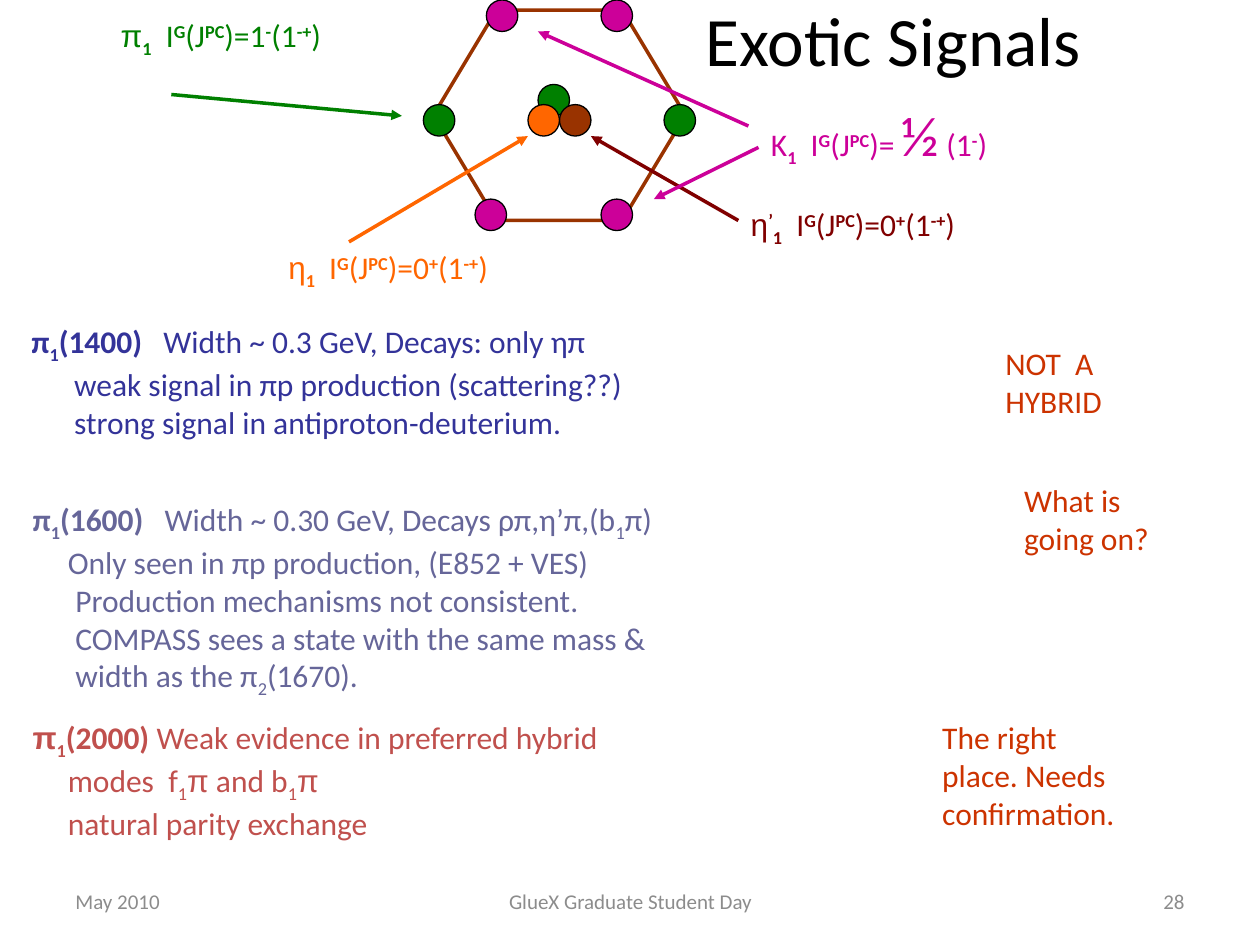
from dataclasses import dataclass
from typing import List, NamedTuple, Optional, Tuple

import lxml.etree
import pptx
import pptx.dml.color
import pptx.enum.shapes
import pptx.enum.text
import pptx.oxml.ns
import pptx.util

Inches = pptx.util.Inches
Pt = pptx.util.Pt
Align = pptx.enum.text.PP_ALIGN
Anchor = pptx.enum.text.MSO_ANCHOR
Shape = pptx.enum.shapes.MSO_SHAPE
qn = pptx.oxml.ns.qn


@dataclass(frozen=True)
class Theme:
    font: str = "Calibri"
    greek_font: str = "Arial"
    title_size: float = 39.6
    body_size: float = 18
    half_size: float = 32
    footer_size: float = 12
    black: str = "000000"
    grey: str = "8C8C8C"
    green: str = "008000"
    maroon: str = "800000"
    brown: str = "993300"
    orange: str = "FF6600"
    magenta: str = "CC0099"
    navy: str = "333399"
    slate: str = "666699"
    red: str = "C0504D"
    comment: str = "CC3300"


THEME = Theme()


class Run(NamedTuple):
    text: str
    bold: bool = False
    baseline: int = 0
    font: str = THEME.font
    size: Optional[float] = None
    spacing: int = 0


class Para(NamedTuple):
    runs: List[Run]
    indent: float = 0


@dataclass(frozen=True)
class Block:
    box: Tuple[float, float, float, float]
    color: str
    paras: List[Para]
    size: float = THEME.body_size
    align: Align = Align.LEFT
    anchor: Anchor = Anchor.TOP
    top_inset: float = 0.05
    bottom_inset: float = 0.05


class Meson(NamedTuple):
    left: float
    top: float
    color: str


class Arrow(NamedTuple):
    start: Tuple[float, float]
    end: Tuple[float, float]
    color: str


def sub(text: str, bold: bool = False) -> Run:
    return Run(text, bold, -25)


def sup(text: str) -> Run:
    return Run(text, True, 30)


def greek(text: str, bold: bool = False) -> Run:
    return Run(text, bold, font=THEME.greek_font)


def gap(spaces: int) -> Run:
    return Run(" ", spacing=(spaces - 1) * 400)


def lines(*texts: str, indent: float = 0) -> List[Para]:
    return [Para([Run(text)], indent) for text in texts]


def quantum_numbers(name: List[Run], isospin: List[Run], spin: str, parity: str) -> List[Para]:
    return [Para([*name, sub("1", True), gap(2), Run("I"), sup("G"), Run("(J"), sup("PC"),
                  Run(")="), *isospin, Run(spin), sup(parity), Run(")")])]


def state(pi: Run, mass: str) -> List[Run]:
    return [pi, sub("1", True), Run(mass, True)]


def add_block(s, block: Block) -> None:
    sp = s.shapes.add_textbox(*map(Inches, block.box))
    tf = sp.text_frame
    tf.word_wrap = True
    tf.vertical_anchor = block.anchor
    tf.margin_top, tf.margin_bottom = Inches(block.top_inset), Inches(block.bottom_inset)
    for i, para in enumerate(block.paras):
        p = tf.add_paragraph() if i else tf.paragraphs[0]
        p.alignment = block.align
        if para.indent:
            p._p.get_or_add_pPr().set("marL", str(Inches(para.indent)))
        for run in para.runs:
            r = p.add_run()
            r.text = run.text
            r.font.name = run.font
            r.font.size = Pt(run.size or block.size)
            r.font.bold = run.bold
            r.font.color.rgb = pptx.dml.color.RGBColor.from_string(block.color)
            if run.baseline:
                r.font._element.set("baseline", str(run.baseline * 1000))
            if run.spacing:
                r.font._element.set("spc", str(run.spacing))


def set_line(line, color: str, width: float) -> None:
    line.color.rgb = pptx.dml.color.RGBColor.from_string(color)
    line.width = Pt(width)


def add_hexagon(s) -> None:
    sp = s.shapes.add_shape(Shape.HEXAGON, Inches(3.44), Inches(0.08), Inches(2), Inches(1.67))
    sp.adjustments[0] = 0.3
    sp.adjustments[1] = 1.155
    sp.shadow.inherit = False
    sp.fill.background()
    set_line(sp.line, THEME.brown, 2)


def add_meson(s, meson: Meson) -> None:
    size = Inches(0.25)
    sp = s.shapes.add_shape(Shape.OVAL, Inches(meson.left), Inches(meson.top), size, size)
    sp.shadow.inherit = False
    sp.fill.solid()
    sp.fill.fore_color.rgb = pptx.dml.color.RGBColor.from_string(meson.color)
    set_line(sp.line, THEME.black, 0.75)


def add_arrow(s, arrow: Arrow) -> None:
    sp = s.shapes.add_connector(pptx.enum.shapes.MSO_CONNECTOR.STRAIGHT,
                                *map(Inches, arrow.start + arrow.end))
    set_line(sp.line, arrow.color, 2)
    ln = sp.line._get_or_add_ln()
    lxml.etree.SubElement(ln, qn("a:tailEnd"), type="triangle")
    lxml.etree.SubElement(sp._element.spPr, qn("a:effectLst"))


T = THEME
FOOTERS = [
    Block((left, 6.95, width, 0.4), T.grey, lines(text), T.footer_size, align, Anchor.MIDDLE)
    for left, width, text, align in [
        (0.5, 2.33, "May 2010", Align.LEFT),
        (3.42, 3.17, "GlueX Graduate Student Day", Align.CENTER),
        (7.17, 2.33, "28", Align.RIGHT)]
]
TITLE = Block((5.05, 0, 4.08, 0.51), T.black, lines("Exotic Signals"), T.title_size,
              Align.CENTER, Anchor.MIDDLE, 0.1, 0)
ZERO_PLUS = [Run("0"), sup("+")]
LABELS = [
    Block((0.86, 0.08, 2.89, 0.5), T.green,
          quantum_numbers([greek("π")], [Run("1"), sup("-")], "(1", "-+")),
    Block((5.86, 1.58, 3.11, 0.5), T.maroon,
          quantum_numbers([greek("η"), sup("’")], ZERO_PLUS, "(1", "-+")),
    Block((2.19, 1.92, 3.06, 0.5), T.orange,
          quantum_numbers([greek("η")], ZERO_PLUS, "(1", "-+")),
    Block((6.02, 0.75, 2.98, 0.63), T.magenta,
          quantum_numbers([Run("K")], [Run(" "), Run("½", size=T.half_size)], " (1", "-")),
]
STATES = [
    Block((0.15, 2.51, 7.4, 1.3), T.navy, [
        Para([*state(Run("π", True), "(1400)"), gap(3),
              Run("Width ~ 0.3 GeV, Decays: only ηπ")]),
        *lines("weak signal in πp production (scattering??)",
               "strong signal in antiproton-deuterium.", indent=0.34)]),
    Block((0.16, 3.92, 5.21, 1.62), T.slate, [
        Para([*state(Run("π", True), "(1600)"), gap(3),
              Run("Width ~ 0.30 GeV, Decays ρπ,η’π,(b"), sub("1"), Run("π)")]),
        *lines("Only seen in πp production, (E852 + VES)", indent=0.28),
        *lines("Production mechanisms not consistent.",
               "COMPASS sees a state with the same mass &", indent=0.34),
        Para([Run("width as the π"), sub("2"), Run("(1670).")], 0.34)]),
    Block((0.16, 5.65, 4.69, 1.01), T.red, [
        Para([*state(greek("π", True), "(2000)"), Run(" Weak evidence in preferred hybrid")]),
        Para([Run("modes"), gap(2), Run("f"), sub("1"), greek("π"), Run(" and b"),
              sub("1"), greek("π")], 0.28),
        *lines("natural parity exchange", indent=0.28)]),
]
COMMENTS = [
    Block((7.88, 2.68, 1.51, 0.9), T.comment,
          [Para([Run("NOT"), gap(2), Run("A")]), *lines("HYBRID")]),
    Block((8.03, 3.77, 1.2, 0.71), T.comment, lines("What is", "going on?")),
    Block((7.38, 5.65, 2.26, 1.3), T.comment,
          lines("The right", "place. Needs", "confirmation.")),
]
MESONS = [
    Meson(4.77, 1.58, T.magenta), Meson(3.36, 0.83, T.green), Meson(4.27, 0.67, T.green),
    Meson(5.27, 0.83, T.green), Meson(4.44, 0.83, T.brown), Meson(4.19, 0.83, T.orange),
    Meson(3.86, 0, T.magenta), Meson(4.77, 0, T.magenta), Meson(3.77, 1.58, T.magenta),
]
ARROWS = [
    Arrow((5.86, 1.75), (4.69, 1.08), T.maroon),
    Arrow((2.77, 1.92), (4.19, 1.08), T.orange),
    Arrow((6.02, 1.17), (5.19, 1.58), T.magenta),
    Arrow((5.94, 1), (4.27, 0.25), T.magenta),
    Arrow((1.36, 0.75), (3.19, 0.92), T.green),
]


def main() -> None:
    prs = pptx.Presentation()
    prs.slide_width, prs.slide_height = Inches(10), Inches(7.5)
    s = prs.slides.add_slide(prs.slide_layouts[6])
    add_hexagon(s)
    for meson in MESONS:
        add_meson(s, meson)
    for arrow in ARROWS:
        add_arrow(s, arrow)
    for block in [*FOOTERS, TITLE, *LABELS, *STATES, *COMMENTS]:
        add_block(s, block)
    prs.save("out.pptx")


if __name__ == "__main__":
    main()
